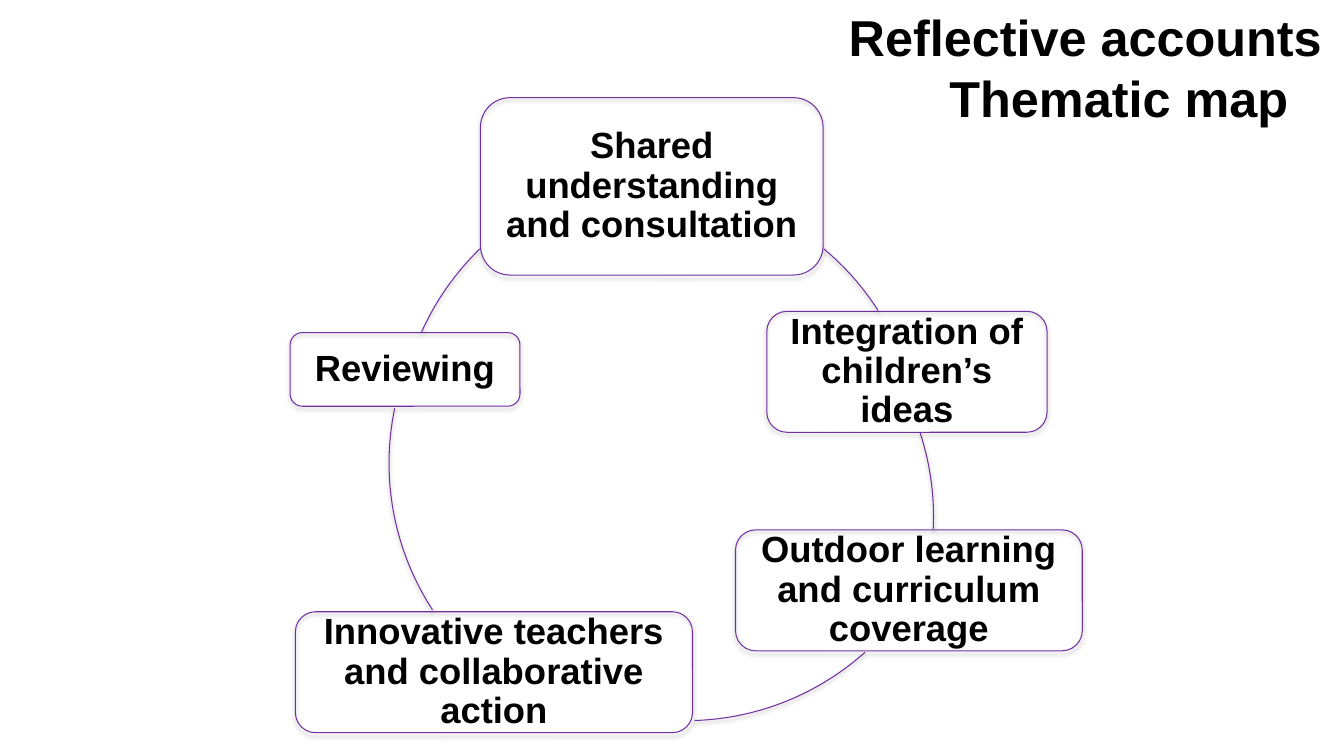
from lxml.etree import SubElement
from pptx import Presentation
from pptx.dml.color import RGBColor
from pptx.enum.shapes import MSO_SHAPE
from pptx.enum.text import MSO_ANCHOR, MSO_AUTO_SIZE, PP_ALIGN
from pptx.oxml.ns import qn
from pptx.util import Pt

BLACK = RGBColor(0x00, 0x00, 0x00)
PURPLE = RGBColor(0x70, 0x30, 0xA0)
FONT = "Arial"
DIAMETER = 383.8
CORNER_INSET = 0.05  # share of the box height kept clear at rounded corners


def style_outline(shape):
    """Purple outline without fill, over a soft shadow falling straight down."""
    shape.fill.background()
    shape.line.color.rgb = PURPLE
    shape.line.width = Pt(0.75)
    shape.shadow.inherit = False
    effects = shape._element.spPr.find(qn("a:effectLst"))
    shadow = SubElement(effects, qn("a:outerShdw"), blurRad=str(Pt(3.1)),
                        dist=str(Pt(1.8)), dir="5400000", rotWithShape="0")
    color = SubElement(shadow, qn("a:srgbClr"), val=str(BLACK))
    SubElement(color, qn("a:alpha"), val="35000")


def style_text(paragraph, size, alignment):
    paragraph.alignment = alignment
    paragraph.font.name = FONT
    paragraph.font.size = Pt(size)
    paragraph.font.bold = True
    paragraph.font.color.rgb = BLACK


deck = Presentation()
deck.slide_width, deck.slide_height = Pt(960), Pt(540)
page = deck.slides.add_slide(deck.slide_layouts[5])

# Title, second line indented by a tab
title = page.shapes.title
title.left, title.top, title.width, title.height = Pt(599), Pt(2.6), Pt(358.6), Pt(90)
title.text_frame.text = "Reflective accounts\v\tThematic map"
title.text_frame.auto_size = MSO_AUTO_SIZE.NONE
title.text_frame.vertical_anchor = MSO_ANCHOR.MIDDLE
heading = title.text_frame.paragraphs[0]
tabs = SubElement(heading._p.get_or_add_pPr(), qn("a:tabLst"))
SubElement(tabs, qn("a:tab"), pos=str(Pt(72)), algn="l")
style_text(heading, 36, PP_ALIGN.LEFT)

# Themes around the cycle: text, left, top, width, height
themes = [
    ("Shared understanding and consultation", 343.2, 69.8, 244.8, 126.7),
    ("Integration of children’s ideas", 547.7, 222.4, 200.2, 86.4),
    ("Outdoor learning and curriculum coverage", 525.4, 378.5, 247.7, 86.4),
    ("Innovative teachers and collaborative action", 211, 437, 283.7, 86.4),
    ("Reviewing", 207.2, 237.6, 164.2, 52.6),
]
for text, left, top, width, height in themes:
    outline = page.shapes.add_shape(MSO_SHAPE.ROUNDED_RECTANGLE,
                                    Pt(left), Pt(top), Pt(width), Pt(height))
    style_outline(outline)
    # Label in its own box, so that the shadow stays off the text
    inset = height * CORNER_INSET
    label = page.shapes.add_textbox(Pt(left + inset), Pt(top + inset),
                                    Pt(width - 2 * inset), Pt(height - 2 * inset))
    frame = label.text_frame
    frame.word_wrap = True
    frame.vertical_anchor = MSO_ANCHOR.MIDDLE
    frame.margin_left = frame.margin_right = Pt(7.8)
    frame.margin_top = frame.margin_bottom = Pt(7.8)
    frame.text = text
    style_text(frame.paragraphs[0], 26, PP_ALIGN.CENTER)
    frame.paragraphs[0].line_spacing = 0.9

# Arcs joining the themes: left and top of the circle, start and end in degrees
arcs = [
    (273.6, 133.2, 309.82, 327.41),
    (283, 177.1, 341.91, 2.7),
    (298.1, 131, 48.2, 88.17),
    (277.9, 139, 146.94, 191.8),
    (284.4, 123.8, 204.2, 225.9),
]
for left, top, *angles in arcs:
    arc = page.shapes.add_shape(MSO_SHAPE.ARC, Pt(left), Pt(top), Pt(DIAMETER), Pt(DIAMETER))
    for index, angle in enumerate(angles):
        arc.adjustments[index] = angle * 0.6  # 60000 units a degree, scaled by 100000
    style_outline(arc)

deck.save("out.pptx")
